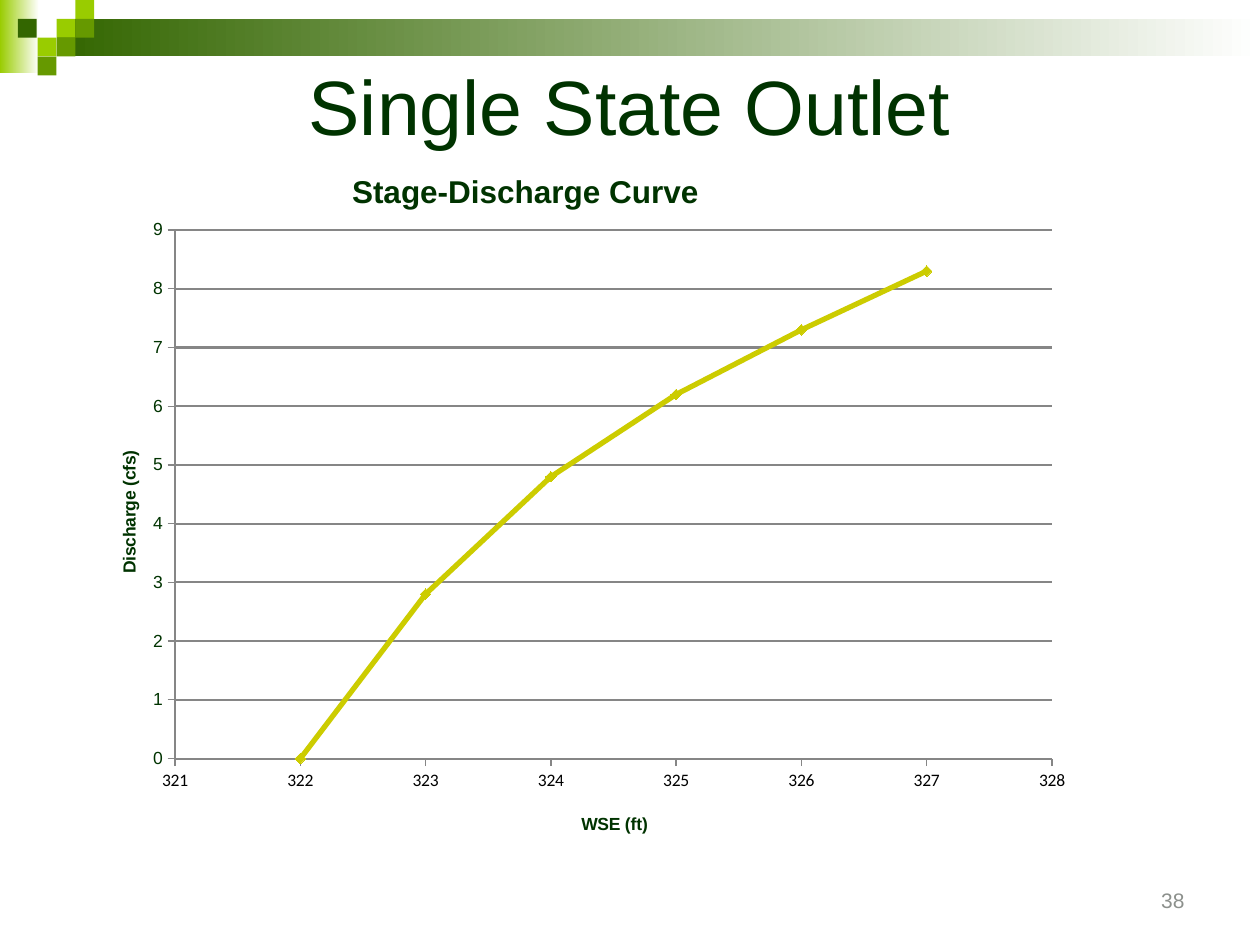
from typing import NamedTuple

from lxml.etree import SubElement
from pptx import Presentation
from pptx.chart.data import XyChartData
from pptx.dml.color import RGBColor
from pptx.enum.chart import XL_CHART_TYPE as ChartType
from pptx.enum.chart import XL_MARKER_STYLE as Marker
from pptx.enum.chart import XL_TICK_MARK as Tick
from pptx.enum.text import MSO_ANCHOR as Anchor
from pptx.enum.text import PP_ALIGN as Align
from pptx.oxml import parse_xml
from pptx.oxml.ns import nsdecls, qn
from pptx.util import Cm, Pt

WHITE = RGBColor(0xFF, 0xFF, 0xFF)
LIME = RGBColor(0x99, 0xCC, 0x00)
LEAF = RGBColor(0x66, 0x99, 0x00)
MOSS = RGBColor(0x33, 0x66, 0x00)
INK = RGBColor(0x00, 0x33, 0x00)
BLACK = RGBColor(0x00, 0x00, 0x00)
GRAY = RGBColor(0x8C, 0x90, 0x8C)
GRID = RGBColor(0x86, 0x86, 0x86)
OLIVE = RGBColor(0xCC, 0xCC, 0x00)

TILE = 0.38  # side of one square in the corner pattern, in cm


class Tile(NamedTuple):
    col: float
    row: int
    color: RGBColor


class Band(NamedTuple):
    x: float
    y: float
    w: float
    h: float
    color: RGBColor


BANDS = [
    Band(0, 0, 0.79, 1.47, LIME),
    Band(3 * TILE, TILE, 24.26, 0.75, MOSS),
]
TILES = [
    Tile(3, 1, LIME), Tile(4, 0, LIME), Tile(4, 1, LEAF), Tile(2, 2, LIME),
    Tile(0.95, 1, MOSS), Tile(3, 2, LEAF), Tile(2, 3, LEAF),
]
STAGES = range(322, 328)
DISCHARGES = [0, 2.8, 4.8, 6.2, 7.3, 8.3]


def add_rect(s, x: float, y: float, w: float, h: float):
    sp = s.shapes.add_shape(1, Cm(x), Cm(y), Cm(w), Cm(h))
    sp.shadow.inherit = False
    sp.line.fill.background()
    return sp


def add_band(s, band: Band) -> None:
    fill = add_rect(s, band.x, band.y, band.w, band.h).fill
    fill.gradient()
    fill.gradient_angle = 0
    for stop, color, pos in zip(fill.gradient_stops, (band.color, WHITE), (0, 1)):
        stop.color.rgb = color
        stop.position = pos


def add_tile(s, tile: Tile) -> None:
    fill = add_rect(s, tile.col * TILE, tile.row * TILE, TILE, TILE).fill
    fill.solid()
    fill.fore_color.rgb = tile.color


def write(tf, text: str, *, size: float, color: RGBColor = INK,
          bold: bool = False, align=None) -> None:
    p = tf.paragraphs[0]
    p.alignment = align
    r = p.add_run()
    r.text = text
    r.font.name = "Arial"
    r.font.size = Pt(size)
    r.font.bold = bold
    r.font.color.rgb = color


def add_text(s, x: float, y: float, w: float, h: float, text: str, **fmt) -> None:
    tf = s.shapes.add_textbox(Cm(x), Cm(y), Cm(w), Cm(h)).text_frame
    tf.word_wrap = True
    tf.vertical_anchor = Anchor.MIDDLE
    write(tf, text, **fmt)


def place(element, index: int, **fractions: float) -> None:
    """Fix a chart part at fractions of the chart's size."""
    for old in element.findall(qn("c:layout")):
        element.remove(old)
    layout = parse_xml(f"<c:layout {nsdecls('c')}><c:manualLayout/></c:layout>")
    manual = layout[0]
    if "w" in fractions:
        SubElement(manual, qn("c:layoutTarget")).set("val", "inner")
    for mode in ("xMode", "yMode"):
        SubElement(manual, qn(f"c:{mode}")).set("val", "edge")
    for key, value in fractions.items():
        SubElement(manual, qn(f"c:{key}")).set("val", str(value))
    element.insert(index, layout)


def style_axis(axis, title: str, low: int, high: int,
               font: str, color: RGBColor) -> None:
    axis.minimum_scale, axis.maximum_scale, axis.major_unit = low, high, 1
    axis.major_tick_mark, axis.minor_tick_mark = Tick.OUTSIDE, Tick.NONE
    axis.has_major_gridlines = False
    axis.format.line.color.rgb = GRID
    axis.format.line.width = Pt(0.75)
    label = axis.tick_labels.font
    label.name, label.size, label.color.rgb = font, Pt(10), color
    write(axis.axis_title.text_frame, title, size=10, bold=True)


def add_curve(s) -> None:
    data = XyChartData()
    points = data.add_series("Discharge")
    for stage, discharge in zip(STAGES, DISCHARGES):
        points.add_data_point(stage, discharge)
    chart = s.shapes.add_chart(ChartType.XY_SCATTER_SMOOTH, Cm(1.7), Cm(2.74),
                               Cm(20.32), Cm(14.6), data).chart
    chart.has_legend = False
    chart.font.name, chart.font.size, chart.font.color.rgb = "Arial", Pt(10), INK
    write(chart.chart_title.text_frame, "Stage-Discharge Curve", size=18, bold=True)

    # Axes
    x_axis, y_axis = chart.category_axis, chart.value_axis
    style_axis(x_axis, "WSE (ft)", 321, 328, "Calibri", BLACK)
    style_axis(y_axis, "Discharge (cfs)", 0, 9, "Arial", INK)
    y_axis.has_major_gridlines = True
    y_axis.major_gridlines.format.line.color.rgb = GRID
    y_axis.major_gridlines.format.line.width = Pt(1.25)

    # Curve
    chart.plots[0].vary_by_categories = False
    series = chart.plots[0].series[0]
    series.smooth = True
    series.format.line.color.rgb = OLIVE
    series.format.line.width = Pt(3)
    series.marker.style, series.marker.size = Marker.DIAMOND, 6
    series.marker.format.fill.solid()
    series.marker.format.fill.fore_color.rgb = OLIVE
    series.marker.format.line.color.rgb = OLIVE

    # Positions of the plot and the titles
    root = chart.element
    place(root.xpath(".//c:plotArea")[0], 0, x=0.09, y=0.13, w=0.87, h=0.73)
    heading, x_title, y_title = root.xpath(".//c:title")
    place(heading, 1, x=0.26, y=0.04)
    place(x_title, 1, x=0.49, y=0.93)
    place(y_title, 1, x=0.03, y=0.43)
    y_title.xpath(".//a:bodyPr")[0].set("rot", "-5400000")


def main() -> None:
    prs = Presentation()
    prs.slide_width, prs.slide_height = Cm(25.4), Cm(19.05)
    s = prs.slides.add_slide(prs.slide_layouts[6])

    # Corner pattern
    for band in BANDS:
        add_band(s, band)
    for tile in TILES:
        add_tile(s, tile)

    # Page number, chart and title
    add_text(s, 18.2, 17.65, 5.93, 1.01, "38", size=12, color=GRAY, align=Align.RIGHT)
    add_curve(s)
    add_text(s, 1.27, 1.27, 22.86, 1.7, "Single State Outlet", size=44,
             align=Align.CENTER)

    prs.save("out.pptx")


if __name__ == "__main__":
    main()
